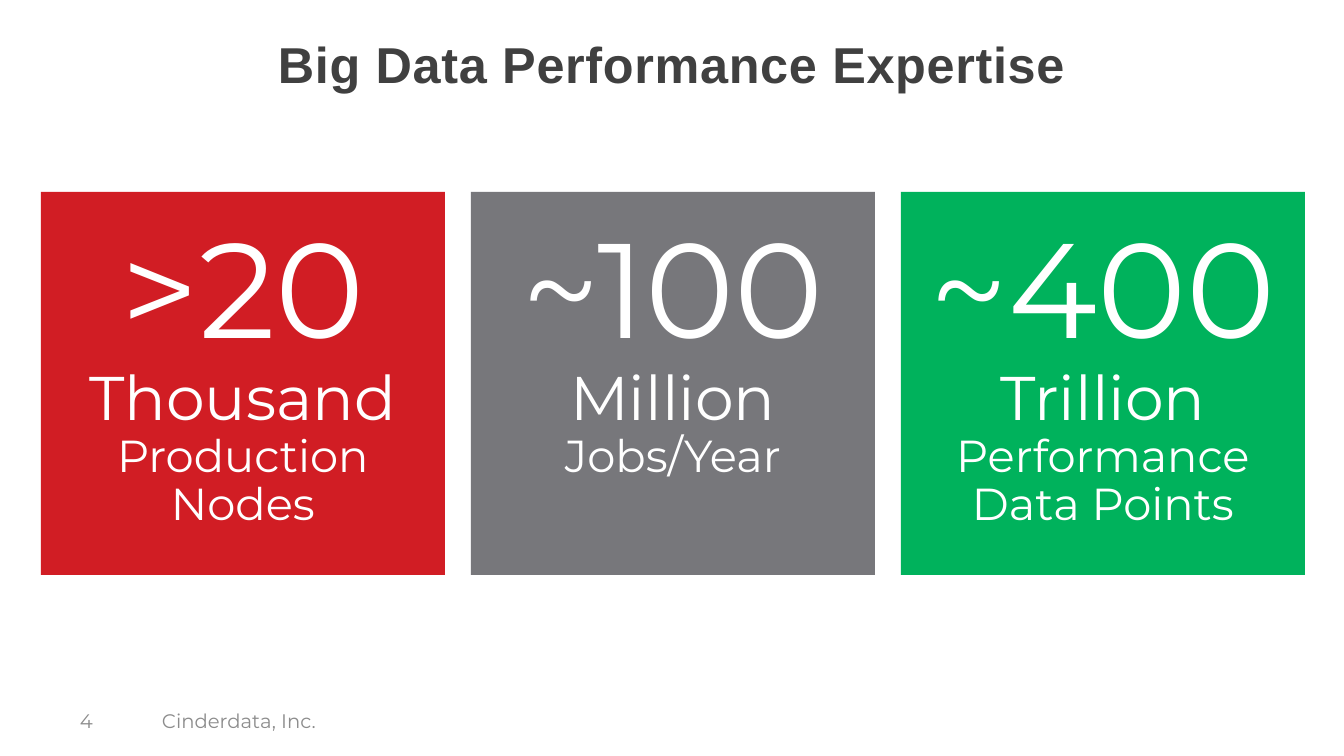
from pptx import Presentation
from pptx.dml.color import RGBColor as RGB
from pptx.enum.shapes import MSO_SHAPE as SHAPE
from pptx.enum.text import MSO_ANCHOR as ANCHOR, PP_ALIGN as ALIGN

SCALE = 914400 / 100.8
THEME = {
    "title": {"name": "Arial", "size": 36, "color": "404040", "bold": True},
    "footer": {"name": "Montserrat", "size": 14, "color": "8C8C8C"},
    "number": {"name": "Montserrat", "size": 96, "color": "FFFFFF"},
    "unit": {"name": "Montserrat", "size": 44, "color": "FFFFFF"},
    "subject": {"name": "Montserrat", "size": 32, "color": "FFFFFF"},
    "cards": ["D11D24", "77777B", "00B25C"],
}


def px(*lengths):
    return [round(length * SCALE) for length in lengths]


def add_text(box, lines, frame_format, paragraph_format):
    label = slide.shapes.add_textbox(*px(*box))
    frame = label.text_frame
    for key, value in {"word_wrap": True, **frame_format}.items():
        setattr(frame, key, value)
    for index, (text, style) in enumerate(lines):
        paragraph = frame.add_paragraph() if index else frame.paragraphs[0]
        for key, value in paragraph_format.items():
            setattr(paragraph, key, value)
        run = paragraph.add_run()
        run.text = text
        for key, value in THEME[style].items():
            if key == "color":
                run.font.color.rgb = RGB.from_string(value)
            else:
                setattr(run.font, key, value * 12700 if key == "size" else value)
    return frame


deck = Presentation()
deck.slide_width, deck.slide_height = px(1344, 756)
slide = deck.slides.add_slide(deck.slide_layouts[6])

centred = {"alignment": ALIGN.CENTER, "line_spacing": 0.9}
title = add_text((70, 35, 1204, 115), [("Big Data Performance Expertise", "title")], {}, centred)
title.paragraphs[0].runs[0].font._element.set("spc", "50")

statistics = [
    (">20", "Thousand", ["Production", "Nodes"]),
    ("~100", "Million", ["Jobs/Year"]),
    ("~400", "Trillion", ["Performance", "Data Points"]),
]
card_left, card_top, card_width, card_height, card_step = 41, 192, 404, 383, 430
for index, (number, unit, subject) in enumerate(statistics):
    box = (card_left + index * card_step, card_top, card_width, card_height)
    card = slide.shapes.add_shape(SHAPE.RECTANGLE, *px(*box))
    card.shadow.inherit = False
    card.fill.solid()
    card.fill.fore_color.rgb = RGB.from_string(THEME["cards"][index])
    card.line.fill.background()
    lines = [(number, "number"), (unit, "unit")] + [(line, "subject") for line in subject]
    add_text(box, lines, {"margin_top": px(30)[0]}, centred)

for left, width, text in [(70, 64, "4"), (152, 747, "Cinderdata, Inc.")]:
    add_text((left, 701, width, 40), [(text, "footer")],
             {"vertical_anchor": ANCHOR.MIDDLE}, {"alignment": ALIGN.LEFT})

deck.save("out.pptx")
